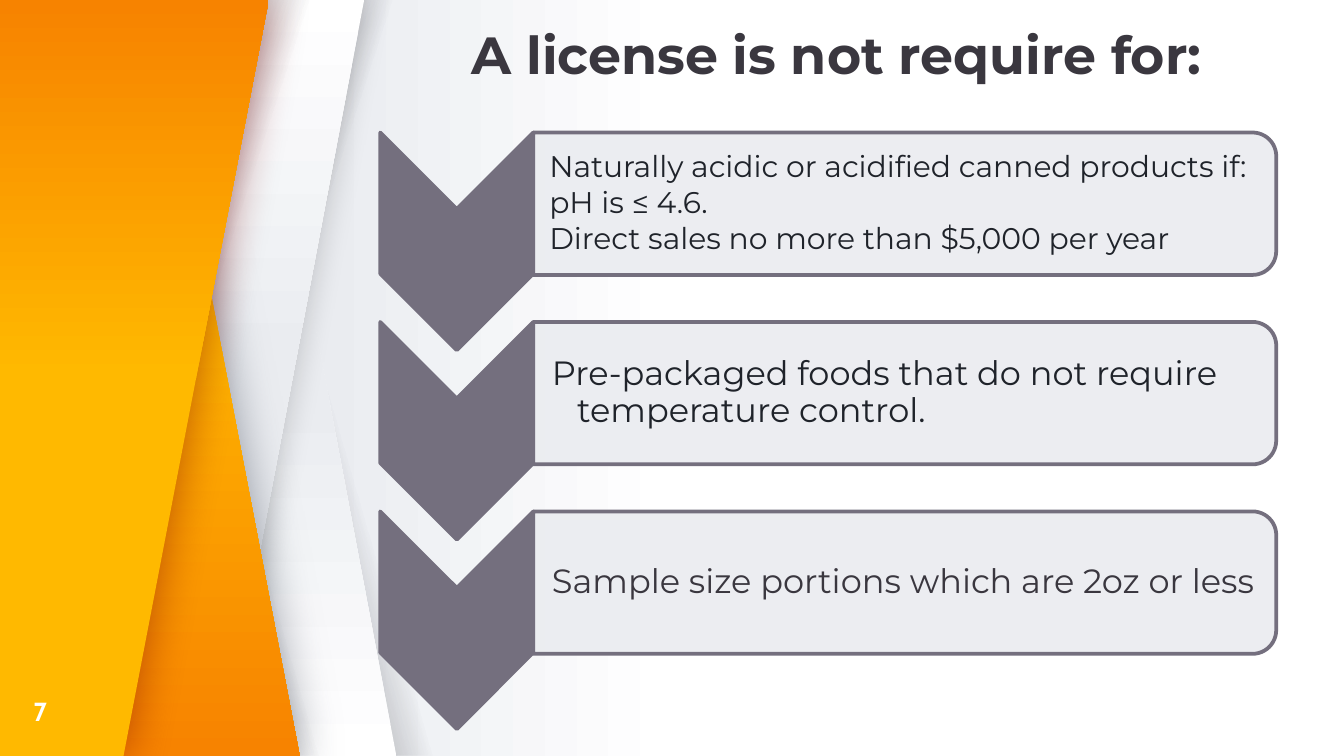
from lxml import etree
from pptx import Presentation
from pptx.dml.color import RGBColor
from pptx.enum.shapes import MSO_SHAPE
from pptx.enum.text import MSO_ANCHOR, MSO_AUTO_SIZE, PP_ALIGN
from pptx.oxml.ns import qn
from pptx.util import Pt

PARALLELOGRAM = MSO_SHAPE.PARALLELOGRAM
CHEVRON = MSO_SHAPE.CHEVRON
ROUND_TOP = MSO_SHAPE.ROUND_2_SAME_RECTANGLE
MIDDLE, BOTTOM = MSO_ANCHOR.MIDDLE, MSO_ANCHOR.BOTTOM
CENTER = PP_ALIGN.CENTER
NO_FIT = MSO_AUTO_SIZE.NONE

WIDTH, HEIGHT = 720, 405
HEADING_FONT, NUMBER_FONT = "Montserrat", "Cabin"
INK, DARK, SLATE, MIST, WHITE = "3A373F", "1F232A", "746F7E", "EAECF0", "FFFFFF"
SHADE = [(0, "3E4655", 100), (13, "3E4655", 100), (55, "27252C", 0), (100, "27252C", 0)]
SILVER = [(0, WHITE, 100), (47, MIST, 100), (100, MIST, 100)]
BACKDROP = [(0, WHITE, 100), (50, WHITE, 100), (76, MIST, 100), (100, MIST, 100)]


def rgb(value):
    """Turn a hex string into a colour."""
    return RGBColor.from_string(value)


def add_colour(parent, value, alpha):
    """Append a colour with its opacity in percent."""
    clr = etree.SubElement(parent, qn("a:srgbClr"), val=value)
    if alpha < 100:
        etree.SubElement(clr, qn("a:alpha"), val=str(alpha * 1000))


def set_gradient(fill, element, stops, angle):
    """Give a fill a linear gradient, its angle measured clockwise."""
    fill.gradient()
    fill.gradient_angle = 360 - angle
    gs_list = element.find(".//" + qn("a:gsLst"))
    for old in list(gs_list):
        gs_list.remove(old)
    for pos, value, alpha in stops:
        gs = etree.SubElement(gs_list, qn("a:gs"), pos=str(pos * 1000))
        add_colour(gs, value, alpha)


def paint_band(sp, stops, angle, glow=None):
    """Finish a decorative band with a gradient and an optional soft shadow."""
    set_gradient(sp.fill, sp.element, stops, angle)
    sp.line.fill.background()
    sp.shadow.inherit = False
    if glow:
        value, alpha, blur = glow
        effects = sp.element.spPr.find(qn("a:effectLst"))
        shadow = etree.SubElement(effects, qn("a:outerShdw"), blurRad=str(Pt(blur)),
                                  dist="0", dir="0", algn="ctr", rotWithShape="0")
        add_colour(shadow, value, alpha)


def add_slant(s, box, flip, adj, stops, angle, glow=None):
    """Add a slanted band, leaning left when flipped."""
    sp = s.shapes.add_shape(PARALLELOGRAM, *map(Pt, box))
    sp.adjustments[0] = adj
    if flip:
        sp.element.spPr.xfrm.set("flipH", "1")
    paint_band(sp, stops, angle, glow)


def add_edge(s, box, top, bottom, stops, angle, glow):
    """Add a band from the left side of the box to a slanted edge."""
    x, y, _, h = box
    builder = s.shapes.build_freeform(Pt(x), Pt(y))
    corners = [(x, y + h), (x + bottom, y + h), (x + top, y)]
    builder.add_line_segments([(Pt(a), Pt(b)) for a, b in corners])
    paint_band(builder.convert_to_shape(), stops, angle, glow)


def add_decoration(s, box):
    """Draw the layered silver and orange bands."""
    x, y, w, h = box

    def strip(dx):
        return x + dx, y, w, h

    orange = [(0, "FFB900", 100), (37, "FFB900", 100), (100, "F78300", 100)]
    amber = [(0, "FFB900", 100), (50, "FFB900", 100), (100, "F78300", 100)]
    add_slant(s, strip(77), True, 0.753, SHADE, 196)
    add_slant(s, strip(46.8), True, 0.463, SILVER, 270)
    add_slant(s, strip(46.8), False, 0.753, SHADE, 18)
    add_slant(s, strip(29.5), False, 0.463, SILVER, 90, ("000000", 20, 16.9))
    add_slant(s, strip(15.8), True, 0.753, SHADE, 196)
    add_edge(s, box, 82.8, 160.6, orange, 90, ("3E4655", 50, 24.8))
    add_slant(s, strip(2.2), False, 0.753, SHADE, 18)
    add_edge(s, box, 144, 66.2, amber, 270, ("7E0808", 50, 24.8))


def set_frame(tf, anchor, left=0, edge=0):
    """Set wrapping, anchor and insets of a text frame."""
    tf.word_wrap = True
    tf.auto_size = NO_FIT
    tf.vertical_anchor = anchor
    tf.margin_left = Pt(left)
    tf.margin_top = tf.margin_right = tf.margin_bottom = Pt(edge)


def add_run(p, text, font, size, colour, bold=False):
    """Add one formatted run."""
    r = p.add_run()
    r.text = text
    r.font.name = font
    r.font.size = Pt(size)
    r.font.bold = bold
    r.font.color.rgb = rgb(colour)


def add_title(s, box, text):
    """Place and format the title placeholder."""
    sp = s.shapes.title
    sp.left, sp.top, sp.width, sp.height = map(Pt, box)
    set_frame(sp.text_frame, BOTTOM)
    p = sp.text_frame.paragraphs[0]
    p.alignment = CENTER
    p.line_spacing = 0.9
    add_run(p, text, HEADING_FONT, 28, INK, True)


def add_number(s, box, text):
    """Add the slide number."""
    tf = s.shapes.add_textbox(*map(Pt, box)).text_frame
    set_frame(tf, MIDDLE)
    add_run(tf.paragraphs[0], text, NUMBER_FONT, 14, WHITE, True)


def add_turned(s, kind, box, colour, alpha=100):
    """Add a shape turned a quarter so that it covers the box."""
    x, y, w, h = box
    shift = (w - h) / 2
    sp = s.shapes.add_shape(kind, Pt(x + shift), Pt(y - shift), Pt(h), Pt(w))
    sp.rotation = 90
    sp.shadow.inherit = False
    sp.fill.solid()
    sp.fill.fore_color.rgb = rgb(colour)
    if alpha < 100:
        clr = sp.element.spPr.find(qn("a:solidFill")).find(qn("a:srgbClr"))
        etree.SubElement(clr, qn("a:alpha"), val=str(alpha * 1000))
    sp.line.color.rgb = rgb(SLATE)
    sp.line.width = Pt(2)


def add_step(s, box, lines, size, colour, inset):
    """Add a chevron with its text panel."""
    x, y, w, h = box
    arrow_w = 82
    panel_h = 76.3
    panel_x, panel_w = x + arrow_w, w - arrow_w
    add_turned(s, CHEVRON, (x, y, arrow_w, h), SLATE)
    add_turned(s, ROUND_TOP, (panel_x, y, panel_w, panel_h), MIST, 90)
    text_box = (panel_x, y + 4, panel_w - 3.5, panel_h - 8)
    tf = s.shapes.add_textbox(*map(Pt, text_box)).text_frame
    set_frame(tf, MIDDLE, inset, 0.7)
    for i, line in enumerate(lines):
        p = tf.add_paragraph() if i else tf.paragraphs[0]
        pPr = p._p.get_or_add_pPr()
        pPr.set("marL", str(Pt(13.5)))
        pPr.set("indent", str(-Pt(13.5)))
        p.line_spacing = 0.9
        p.space_after = Pt(2)
        add_run(p, line, HEADING_FONT, size, colour)


def main():
    """Build the slide and save it."""
    prs = Presentation()
    prs.slide_width, prs.slide_height = Pt(WIDTH), Pt(HEIGHT)
    s = prs.slides.add_slide(prs.slide_layouts[5])
    set_gradient(s.background.fill, s.element, BACKDROP, 180)
    add_decoration(s, (0, 0, 165.6, HEIGHT))
    add_title(s, (184.3, 18, 535.7, 28), "A license is not require for: ")
    add_number(s, (18, 371.5, 28.8, 19.4), "7")
    steps = [
        (["Naturally acidic or acidified canned products if:", "pH is ≤ 4.6.",
          "Direct sales no more than $5,000 per year"], 16, DARK, 8.6),
        (["Pre-packaged foods that do not require temperature control."], 18, DARK, 10),
        (["Sample size portions which are 2oz or less"], 18, INK, 10),
    ]
    for i, step in enumerate(steps):
        add_step(s, (203.7, 71 + i * 101.5, 480, 116.6), *step)
    prs.save("out.pptx")


if __name__ == "__main__":
    main()
